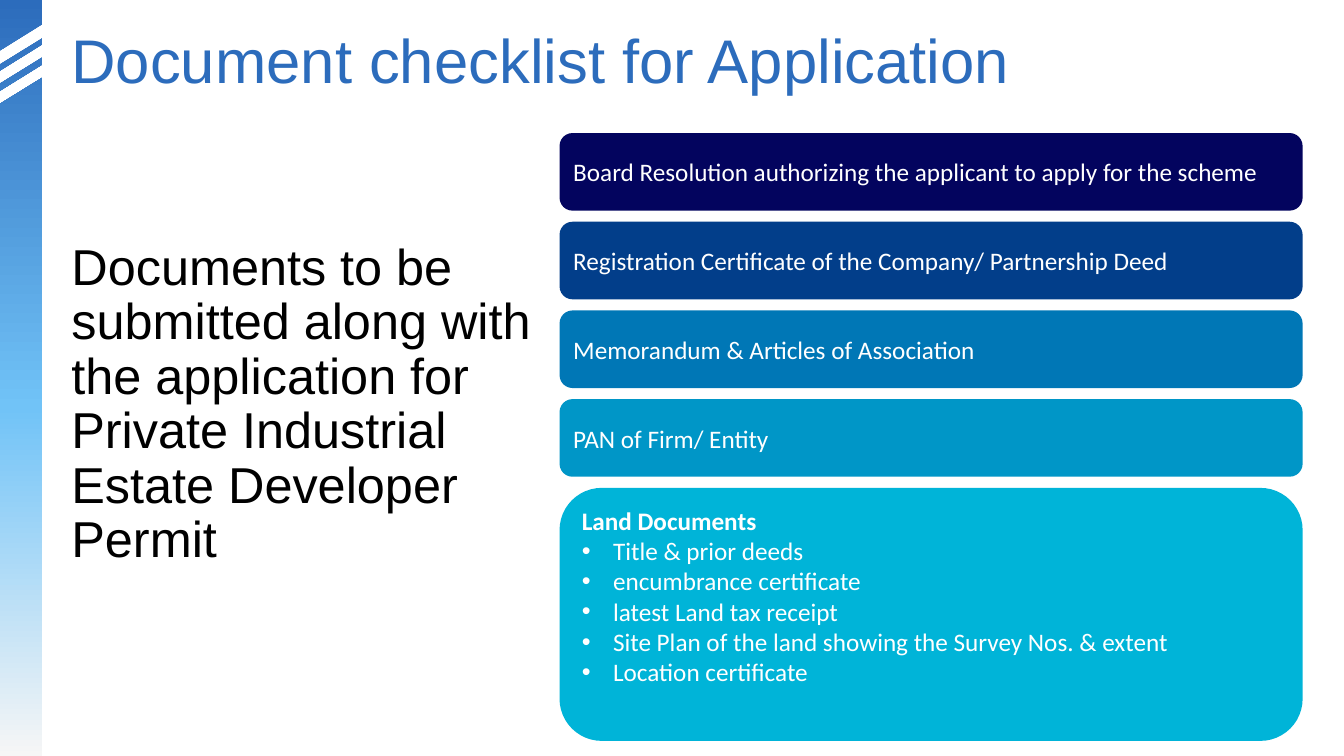
from copy import deepcopy

from lxml.etree import SubElement
from pptx import Presentation
from pptx.dml.color import RGBColor
from pptx.enum.shapes import MSO_SHAPE
from pptx.enum.text import MSO_ANCHOR, PP_ALIGN
from pptx.oxml.ns import qn
from pptx.util import Pt

PX = 9144  # 100 px to the inch
SLIDE_W, SLIDE_H = 1333, 750

COLORS = {
    "title": "2C6CBC", "body": "000000", "card_text": "FFFFFF",
    "band_top": "2C6CBC", "band_middle": "71C3F7", "band_bottom": "F6F6F6",
    "navy": "03045E", "royal": "023E8A", "blue": "0077B6",
    "sky": "0096C7", "cyan": "00B4D8",
}

TITLE = "Document checklist for Application"
INTRO = ("Documents to be submitted along with the application for "
         "Private Industrial Estate Developer Permit")
# Colour, heading, bulleted items
CARDS = [
    ("navy", "Board Resolution authorizing the applicant to apply for the scheme", []),
    ("royal", "Registration Certificate of the Company/ Partnership Deed", []),
    ("blue", "Memorandum & Articles of Association", []),
    ("sky", "PAN of Firm/ Entity", []),
    ("cyan", "Land Documents", [
        "Title & prior deeds",
        "encumbrance certificate",
        "latest Land tax receipt",
        "Site Plan of the land showing the Survey Nos. & extent",
        "Location certificate",
    ]),
]

BAND_W, BAND_SLANT = 42, 26
# Top and bottom of each band piece along its right edge
BAND_PIECES = [(77, SLIDE_H), (57, 64), (38, 44), (0, 24)]
BAND_STOPS = [("band_top", 0), ("band_middle", 0.54), ("band_bottom", 1)]

CARD_LEFT, CARD_TOP, CARD_W, CARD_GAP = 555, 132, 737, 11
CARD_H, LIST_CARD_H = 77, 251
BULLET_INDENT = 31


def rgb(name):
    return RGBColor.from_string(COLORS[name])


def style(paragraph, font, size, color, bold=False):
    for run in paragraph.runs:
        run.font.name, run.font.size, run.font.bold = font, Pt(size), bold
        run.font.color.rgb = rgb(color)


def add_bullet(paragraph):
    properties = paragraph._p.get_or_add_pPr()
    properties.set("marL", str(BULLET_INDENT * PX))
    properties.set("indent", str(-BULLET_INDENT * PX))
    SubElement(properties, qn("a:buFont"), typeface="Arial")
    SubElement(properties, qn("a:buChar"), char="•")


def add_band(slide):
    """Draw the gradient side band cut by slanted white stripes."""
    builder = slide.shapes.build_freeform(scale=PX)
    for top, bottom in BAND_PIECES:
        left_top = top + BAND_SLANT if top else 0
        left_bottom = min(bottom + BAND_SLANT, SLIDE_H)
        builder.move_to(BAND_W, top)
        builder.add_line_segments(
            [(BAND_W, bottom), (0, left_bottom), (0, left_top)], close=True)
    band = builder.convert_to_shape()
    band.shadow.inherit = False
    band.line.fill.background()
    band.fill.gradient()
    band.fill.gradient_angle = 270
    stop_list = band._element.spPr.find(qn("a:gradFill")).find(qn("a:gsLst"))
    stop_list.insert(1, deepcopy(stop_list[0]))
    for stop, (color, position) in zip(band.fill.gradient_stops, BAND_STOPS):
        stop.color.rgb = rgb(color)
        stop.position = position


def add_text(slide, text, box, size, color):
    frame = slide.shapes.add_textbox(*(side * PX for side in box)).text_frame
    frame.word_wrap = True
    frame.vertical_anchor = MSO_ANCHOR.MIDDLE
    frame.text = text
    frame.paragraphs[0].line_spacing = 0.9
    style(frame.paragraphs[0], "Arial", size, color)


def add_card(slide, top, height, color, heading, items):
    card = slide.shapes.add_shape(
        MSO_SHAPE.ROUNDED_RECTANGLE,
        CARD_LEFT * PX, top * PX, CARD_W * PX, height * PX)
    card.shadow.inherit = False
    card.fill.solid()
    card.fill.fore_color.rgb = rgb(color)
    card.line.fill.background()
    frame = card.text_frame
    frame.word_wrap = True
    frame.vertical_anchor = MSO_ANCHOR.TOP if items else MSO_ANCHOR.MIDDLE
    frame.text = "\n".join([heading, *items])
    for number, paragraph in enumerate(frame.paragraphs):
        paragraph.alignment = PP_ALIGN.JUSTIFY
        style(paragraph, "Calibri", 18, "card_text", bool(items) and number == 0)
        if number:
            add_bullet(paragraph)


def main():
    deck = Presentation()
    deck.slide_width, deck.slide_height = SLIDE_W * PX, SLIDE_H * PX
    slide = deck.slides.add_slide(deck.slide_layouts[6])
    add_band(slide)
    add_text(slide, TITLE, (61, 15, 1221, 96), 44, "title")
    add_text(slide, INTRO, (61, 121, 477, 562), 36, "body")
    top = CARD_TOP
    for color, heading, items in CARDS:
        height = LIST_CARD_H if items else CARD_H
        add_card(slide, top, height, color, heading, items)
        top += height + CARD_GAP
    deck.save("out.pptx")


if __name__ == "__main__":
    main()
